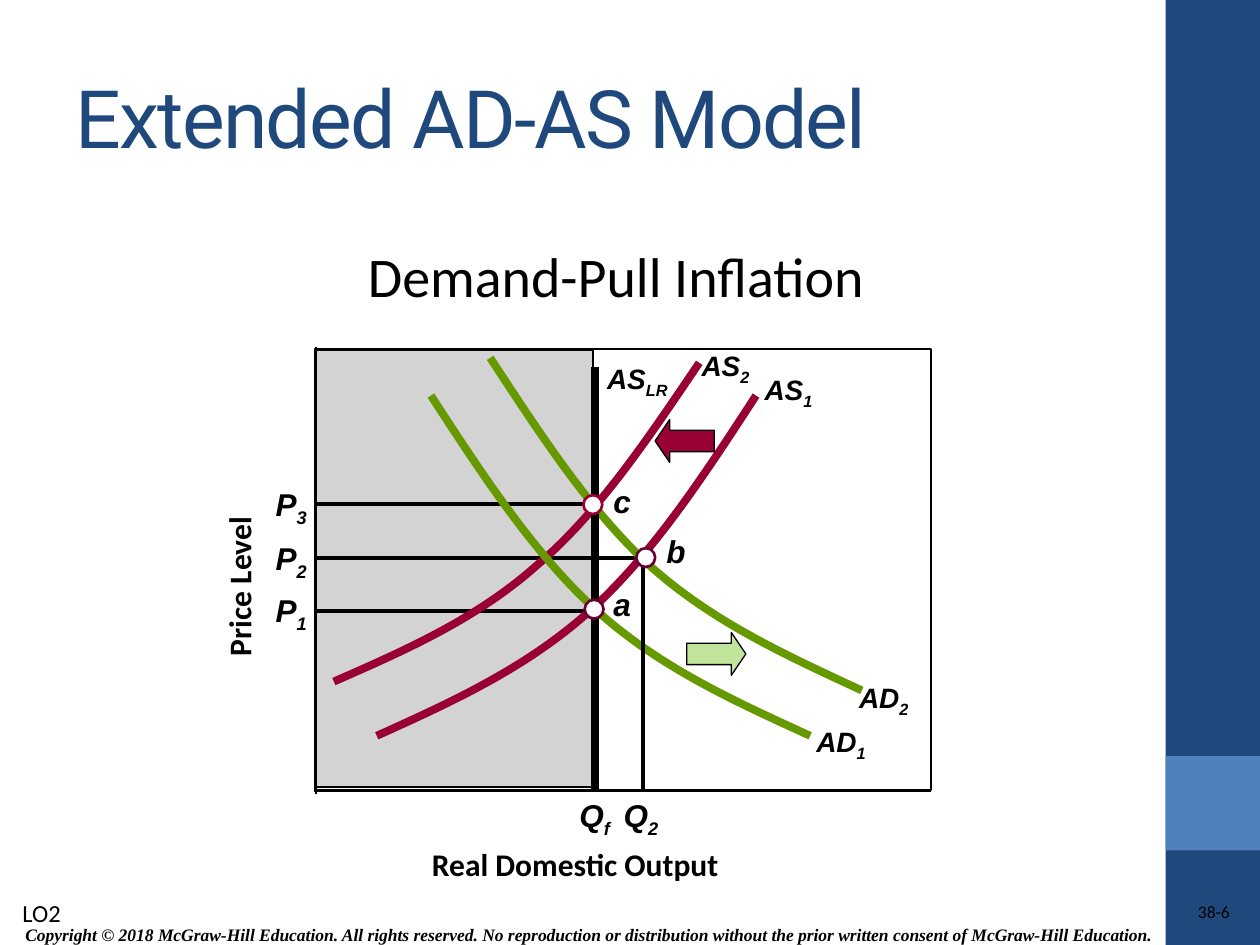
from dataclasses import dataclass
from lxml.etree import SubElement
from pptx import Presentation
from pptx.dml.color import RGBColor
from pptx.enum.shapes import MSO_CONNECTOR, MSO_SHAPE
from pptx.enum.text import MSO_ANCHOR, MSO_AUTO_SIZE, PP_ALIGN
from pptx.oxml.ns import qn
from pptx.util import Inches, Pt


@dataclass(frozen=True)
class Theme:
    navy: str = "1F497D"
    blue: str = "4F81BD"
    black: str = "000000"
    white: str = "FFFFFF"
    shade: str = "D3D3D3"
    supply: str = "990033"
    demand: str = "669900"
    shift: str = "92D050"
    ring: str = "660033"
    heading: str = "Roboto"
    body: str = "Calibri"
    symbol: str = "Arial"
    legal: str = "Times New Roman"
    title_size: int = 46
    subtitle_size: int = 32
    axis_size: int = 18
    curve_size: int = 16
    objective_size: int = 14
    footer_size: int = 10


THEME = Theme()


@dataclass(frozen=True)
class Box:
    left: float
    top: float
    width: float
    height: float
    columns: int = 1
    rows: int = 1

    def point(self, column, row):
        return (Inches(self.left + column * self.width / self.columns),
                Inches(self.top + row * self.height / self.rows))

    def area(self, column, row, across, down):
        return (*self.point(column, row),
                Inches(across * self.width / self.columns),
                Inches(down * self.height / self.rows))


def color(value):
    return RGBColor.from_string(value)


def add_span(para, text, size, font=THEME.body, tint=THEME.black, bold=False, italic=False):
    span = para.add_run()
    span.text = text
    span.font.size, span.font.name = Pt(size), font
    span.font.bold, span.font.italic = bold, italic
    span.font.color.rgb = color(tint)
    return span


def add_text(page, area, text, size, align=PP_ALIGN.LEFT, wrap=False, subscript="", **style):
    box = page.shapes.add_textbox(*area)
    frame = box.text_frame
    frame.word_wrap = wrap
    frame.auto_size = MSO_AUTO_SIZE.SHAPE_TO_FIT_TEXT
    para = frame.paragraphs[0]
    para.alignment = align
    add_span(para, text, size, **style)
    if subscript:
        lowered = add_span(para, subscript, size, **style)
        lowered._r.get_or_add_rPr().set("baseline", "-25000")
    return box


def add_block(page, kind, area, fill=None, line=None, weight=1.25):
    block = page.shapes.add_shape(kind, *area)
    block.shadow.inherit = False
    if fill:
        block.fill.solid()
        block.fill.fore_color.rgb = color(fill)
    else:
        block.fill.background()
    if line:
        block.line.color.rgb = color(line)
        block.line.width = Pt(weight)
    else:
        block.line.fill.background()
    return block


def add_line(page, start, end, weight):
    line = page.shapes.add_connector(MSO_CONNECTOR.STRAIGHT, *start, *end)
    line.line.color.rgb = color(THEME.black)
    line.line.width = Pt(weight)
    SubElement(line._element.spPr, qn("a:effectLst"))


def add_curve(page, box, knots, tint):
    builder = page.shapes.build_freeform(*box.point(*knots[0]))
    builder.add_line_segments([box.point(*knot) for knot in knots[1:]], close=False)
    curve = builder.convert_to_shape()
    outline = next(curve._element.iter(qn("a:moveTo"))).getparent()
    segments = outline.findall(qn("a:lnTo"))
    for first in range(0, len(segments), 3):
        bend = SubElement(outline, qn("a:cubicBezTo"))
        for segment in segments[first:first + 3]:
            bend.append(segment[0])
            outline.remove(segment)
    curve.shadow.inherit = False
    curve.fill.background()
    curve.line.color.rgb = color(tint)
    curve.line.width = Pt(4.5)


def add_arrow(page, kind, area, fill):
    arrow = add_block(page, kind, area, fill, THEME.black, 0.75)
    arrow.adjustments[0], arrow.adjustments[1] = 0.5, 0.34
    return arrow


def draw_sidebar(page, box):
    add_block(page, MSO_SHAPE.RECTANGLE, box.area(0, 0, 1, 10), THEME.navy)
    add_block(page, MSO_SHAPE.RECTANGLE, box.area(0, 8, 1, 1), THEME.blue)


def draw_heading(page, box):
    title = page.shapes.title
    title.left, title.top, title.width, title.height = box.area(5, 3, 83.3, 12.5)
    title.text_frame.vertical_anchor = MSO_ANCHOR.MIDDLE
    title.text_frame.word_wrap = True
    para = title.text_frame.paragraphs[0]
    para.alignment = PP_ALIGN.LEFT
    span = add_span(para, "Extended AD-AS Model", THEME.title_size, THEME.heading, THEME.navy)
    span._r.get_or_add_rPr().set("spc", "-100")
    add_text(page, box.area(24.9, 18.7, 49, 6.4), "Demand-Pull Inflation ",
             THEME.subtitle_size, PP_ALIGN.CENTER, True)


def draw_plot(page, box):
    add_block(page, MSO_SHAPE.RECTANGLE, box.area(0.1, 0.3, 22, 34.7), THEME.shade, THEME.black)
    add_block(page, MSO_SHAPE.RECTANGLE, box.area(0, 0.2, 48.9, 35), None, THEME.black)
    add_line(page, box.point(0.1, 0), box.point(0.1, 35.5), 1.25)
    add_line(page, box.point(-0.1, 35.3), box.point(48.9, 35.3), 1.25)

    for row, reach in ((21, 22.1), (16.8, 26), (12.5, 22)):
        add_line(page, box.point(reach, row), box.point(0.2, row), 2.25)

    curves = (
        (THEME.supply, ((35, 3.9), (30.9, 10.2), (26.8, 16.5), (21.8, 21),
                        (16.8, 25.5), (10.9, 28.2), (4.9, 30.9))),
        (THEME.demand, ((13.9, 0.9), (17.9, 7), (21.9, 13.2), (26.8, 17.6),
                        (31.8, 22), (37.6, 24.6), (43.4, 27.3))),
        (THEME.supply, ((30.5, 1.3), (26.5, 7.2), (22.6, 13.1), (17.7, 17.3),
                        (12.9, 21.6), (7.2, 24.1), (1.5, 26.6))),
        (THEME.demand, ((9.2, 3.9), (13.3, 10.2), (17.4, 16.5), (22.4, 21),
                        (27.4, 25.5), (33.4, 28.2), (39.3, 30.9))),
    )
    for tint, knots in curves:
        add_curve(page, box, knots, tint)

    demand_shift = add_arrow(page, MSO_SHAPE.RIGHT_ARROW, box.area(29.5, 22.7, 4.7, 3.4), THEME.shift)
    fill_color = demand_shift._element.spPr.find(qn("a:solidFill"))[0]
    SubElement(fill_color, qn("a:alpha"), val="57000")
    supply_shift = add_arrow(page, MSO_SHAPE.RIGHT_ARROW, box.area(27, 5.8, 4.7, 3.4), THEME.supply)
    supply_shift._element.spPr.find(qn("a:xfrm")).set("flipH", "1")

    add_line(page, box.point(22.2, 1.6), box.point(22.2, 35.1), 4.5)
    add_line(page, box.point(26, 16.9), box.point(26, 35.1), 2.25)
    for column, row, ring in ((21.4, 20.1, THEME.ring), (21.3, 11.8, THEME.supply),
                              (25.5, 16, THEME.ring)):
        add_block(page, MSO_SHAPE.OVAL, box.area(column, row, 1.5, 1.5), THEME.white, ring, 1.5)
    draw_labels(page, box)


def draw_labels(page, box):
    axis, curve = (THEME.axis_size, 4), (THEME.curve_size, 3.7)
    labels = (
        ("P", "1", -4.1, 18.9, 4.6, axis), ("P", "2", -4.1, 14.8, 4.6, axis),
        ("P", "3", -4.1, 10.5, 4.6, axis), ("Q", "f", 20, 35.2, 4.5, axis),
        ("Q", "2", 23.5, 35.2, 4.9, axis), ("a", "", 22.7, 18.4, 3.4, axis),
        ("b", "", 26.9, 14.2, 3.5, axis), ("c", "", 22.7, 10.3, 3.4, axis),
        ("AS", "1", 34.7, 1.6, 5.9, curve), ("AS", "2", 29.7, -0.3, 5.9, curve),
        ("AS", "LR", 22.2, 0.7, 7.2, curve), ("AD", "1", 38.8, 29.5, 6.1, curve),
        ("AD", "2", 42.2, 26, 6.1, curve),
    )
    for text, subscript, column, row, width, (size, height) in labels:
        add_text(page, box.area(column, row, width, height), text, size,
                 subscript=subscript, font=THEME.symbol, bold=True, italic=True)
    add_text(page, box.area(8.3, 39.1, 24.9, 4), "Real Domestic Output", THEME.axis_size, bold=True)
    price = add_text(page, box.area(-12.6, 17, 13.1, 4), "Price Level", THEME.axis_size, bold=True)
    price.rotation = 270


def draw_footer(page, box):
    add_text(page, box.area(0.8, 70.8, 5.3, 3.4), "LO2", THEME.objective_size, wrap=True)
    notice = add_text(
        page, box.area(0.6, 72.8, 92.2, 2.8),
        "Copyright © 2018 McGraw-Hill Education. All rights reserved. No reproduction or "
        "distribution without the prior written consent of McGraw-Hill Education.",
        THEME.footer_size, PP_ALIGN.CENTER, True, font=THEME.legal, bold=True, italic=True)
    notice.text_frame.vertical_anchor = MSO_ANCHOR.MIDDLE
    number = add_text(page, box.area(78.1, 71.5, 19.5, 2), "38-6",
                      THEME.footer_size, PP_ALIGN.RIGHT, True)
    frame = number.text_frame
    frame.margin_left = frame.margin_right = frame.margin_top = frame.margin_bottom = 0
    frame.paragraphs[0].line_spacing = 1.02


def main():
    deck = Presentation()
    deck.slide_width, deck.slide_height = Inches(10), Inches(7.5)
    page = deck.slides.add_slide(deck.slide_layouts[5])
    whole = Box(0, 0, 10, 7.5, 100, 75)
    draw_sidebar(page, Box(9.25, 0, 0.75, 7.5, 1, 10))
    draw_heading(page, whole)
    draw_plot(page, Box(2.5, 2.75, 4.9, 3.5, 49, 35))
    draw_footer(page, whole)
    deck.save("out.pptx")


if __name__ == "__main__":
    main()
